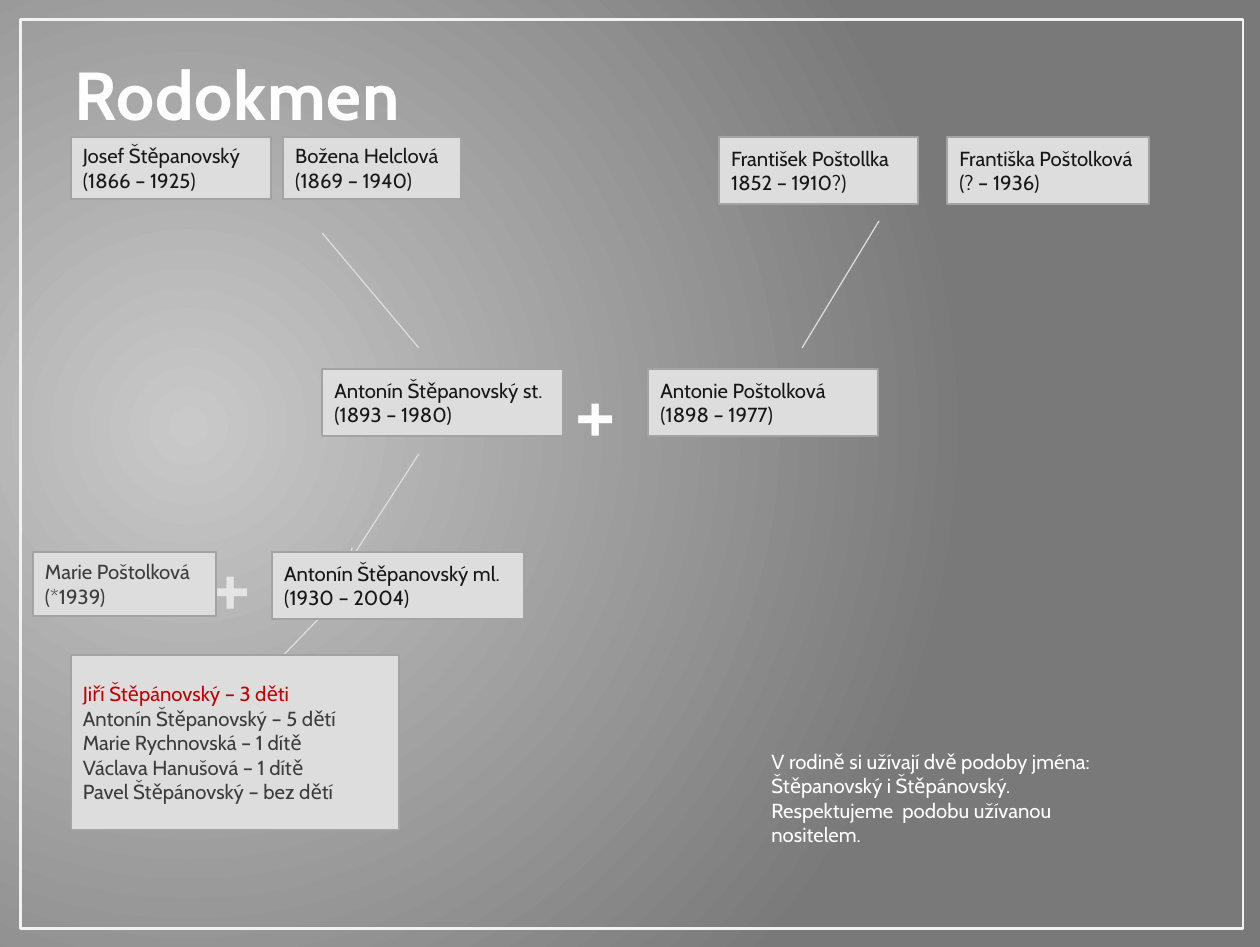
from lxml import etree
from pptx import Presentation
from pptx.dml.color import RGBColor
from pptx.enum.shapes import MSO_CONNECTOR, MSO_SHAPE
from pptx.enum.text import MSO_ANCHOR, PP_ALIGN
from pptx.oxml import parse_xml
from pptx.oxml.ns import qn
from pptx.util import Inches, Pt

RECT = MSO_SHAPE.RECTANGLE
PROCESS = MSO_SHAPE.FLOWCHART_PROCESS
STRAIGHT = MSO_CONNECTOR.STRAIGHT
LEFT = PP_ALIGN.LEFT
TOP, MIDDLE, BOTTOM = MSO_ANCHOR.TOP, MSO_ANCHOR.MIDDLE, MSO_ANCHOR.BOTTOM
FONT = "Cabin"
INK, DARK, GREY, RED = "161616", "181818", "3C3C3C", "C00000"


def rgb(value):
    return RGBColor.from_string(value)


def write(sp, lines, size, anchor, wrap=True):
    """Put (text, colour) paragraphs into a shape."""
    tf = sp.text_frame
    tf.word_wrap = wrap
    tf.vertical_anchor = anchor
    for i, (text, color) in enumerate(lines):
        p = tf.add_paragraph() if i else tf.paragraphs[0]
        p.text = text
        p.alignment = LEFT
        p.font.name = FONT
        p.font.size = Pt(size)
        p.font.color.rgb = rgb(color)
    return tf


prs = Presentation()
prs.slide_width, prs.slide_height = Inches(10.32), Inches(7.76)
s = prs.slides.add_slide(prs.slide_layouts[6])

# Background: radial gradient
fill = s.background.fill
fill.gradient()
for stop, color in zip(fill.gradient_stops, ("C9C9C9", "797979")):
    stop.color.rgb = rgb(color)
fill.gradient_stops[0].position, fill.gradient_stops[1].position = 0, 1
grad = s.background._cSld.find(".//" + qn("a:gradFill"))
grad.replace(grad.find(qn("a:lin")), parse_xml(
    '<a:path xmlns:a="http://schemas.openxmlformats.org/drawingml/2006/main" path="circle">'
    '<a:fillToRect l="15000" t="50000" r="85000" b="60000"/></a:path>'))

# Frame
frame = s.shapes.add_shape(RECT, Inches(0.17), Inches(0.16), Inches(10.01), Inches(7.45))
frame.shadow.inherit = False
frame.fill.background()
frame.line.color.rgb = rgb("F2F2F2")
frame.line.width = Pt(1.5)

# Title
title = s.shapes.add_textbox(Inches(0.51), Inches(-0.14), Inches(9.28), Inches(1.29))
p = write(title, [("Rodokmen", "FEFEFE")], 40, BOTTOM).paragraphs[0]
p.font.bold = True
p.runs[0].font._element.set("spc", "50")

# Descent lines: x1, y1, x2, y2, arrow at end
for x1, y1, x2, y2, arrow in [
    (6.57, 2.85, 7.2, 1.81, False),
    (2.64, 1.91, 3.43, 2.85, False),
    (3.43, 3.72, 2.87, 4.59, True),
    (2.64, 5.04, 2.32, 5.37, False),
]:
    line = s.shapes.add_connector(STRAIGHT, Inches(x1), Inches(y1), Inches(x2), Inches(y2))
    line.line.color.rgb = rgb("DDDDDD")
    line.line.width = Pt(0.75)
    if arrow:
        etree.SubElement(line.line._get_or_add_ln(), qn("a:tailEnd"), type="arrow")
    etree.SubElement(line._element.spPr, qn("a:effectLst"))

# Marriage signs
for x, y, color in [(4.61, 2.85, "FFFFFF"), (1.62, 4.27, "E5E5E5")]:
    plus = s.shapes.add_textbox(Inches(x), Inches(y), Inches(0.7), Inches(1.01))
    write(plus, [("+", color)], 54, TOP, wrap=False)

# People: preset, left, top, width, height, paragraphs
people = [
    (RECT, 0.58, 1.12, 1.64, 0.51, [("Josef Štěpanovský\n(1866 – 1925)", DARK)]),
    (RECT, 2.32, 1.12, 1.46, 0.51, [("Božena Helclová\n(1869 – 1940)", DARK)]),
    (RECT, 5.89, 1.12, 1.63, 0.55, [("František Poštollka\n1852 – 1910?)", INK)]),
    (RECT, 7.76, 1.12, 1.65, 0.55, [("Františka Poštolková\n(? – 1936)", INK)]),
    (PROCESS, 2.64, 3.02, 1.97, 0.55, [("Antonín Štěpanovský st.\n(1893 – 1980)", INK)]),
    (PROCESS, 5.31, 3.02, 1.88, 0.55, [("Antonie Poštolková\n(1898 – 1977)", INK)]),
    (RECT, 0.27, 4.52, 1.5, 0.53, [("Marie Poštolková\n(*1939)", GREY)]),
    (RECT, 2.23, 4.52, 2.06, 0.55, [("Antonín Štěpanovský ml.\n(1930 – 2004)", INK)]),
    (RECT, 0.58, 5.37, 2.69, 1.43, [
        ("Jiří Štěpánovský – 3 děti", RED),
        ("Antonín Štěpanovský – 5 dětí", GREY),
        ("Marie Rychnovská – 1 dítě", GREY),
        ("Václava Hanušová – 1 dítě", GREY),
        ("Pavel Štěpánovský – bez dětí", GREY),
    ]),
]
for preset, x, y, w, h, lines in people:
    box = s.shapes.add_shape(preset, Inches(x), Inches(y), Inches(w), Inches(h))
    box.shadow.inherit = False
    box.fill.solid()
    box.fill.fore_color.rgb = rgb("DDDDDD")
    box.line.color.rgb = rgb("A3A3A3")
    box.line.width = Pt(1.25)
    write(box, lines, 12, MIDDLE)

# Note on the spelling of the name
note = s.shapes.add_textbox(Inches(6.22), Inches(6.09), Inches(3.2), Inches(0.71))
write(note, [("V rodině si užívají dvě podoby jména:\nŠtěpanovský i Štěpánovský.\n"
              "Respektujeme  podobu užívanou nositelem.", "FFFFFF")], 12, TOP)

prs.save("out.pptx")
